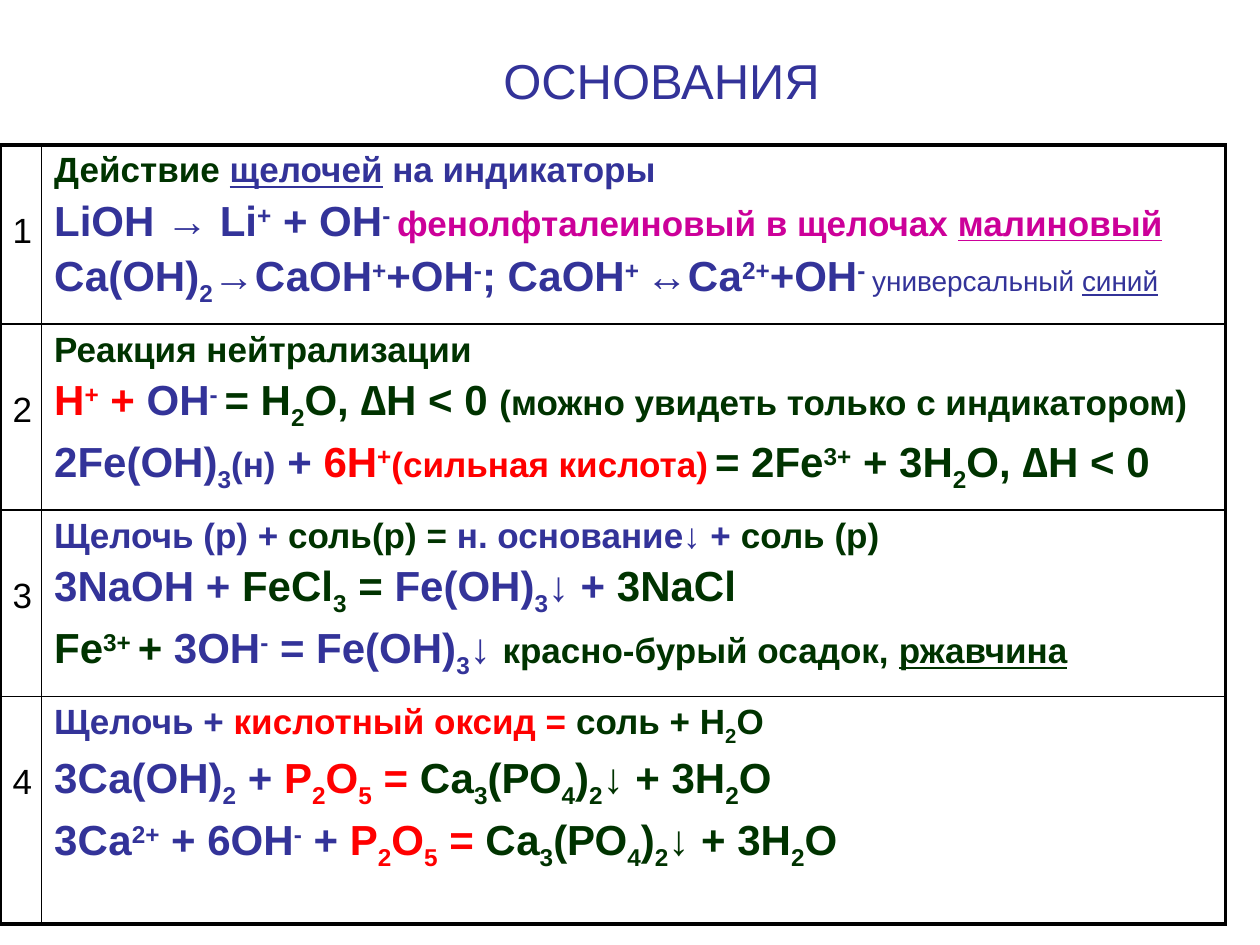
from lxml import etree
from pptx import Presentation
from pptx.dml.color import RGBColor
from pptx.enum.text import MSO_ANCHOR, PP_ALIGN
from pptx.oxml.ns import qn
from pptx.util import Pt

MIDDLE, CENTER = MSO_ANCHOR.MIDDLE, PP_ALIGN.CENTER
FONT = "Arial"
COLORS = {
    "base": "333399", "salt": "003300", "acid": "FF0000",
    "crimson": "CC0099", "black": "000000",
}
HEADING, FORMULA, REMARK = 20, 24, 16
BASELINES = {"^": "30000", "_": "-25000"}
THIN, THICK = 1, 2.25

COLUMN_WIDTHS = (23.8, 676.6)
ROW_HEIGHTS = (101.5, 101.5, 101, 130)

# Each piece is (text, color, format); "|" parts a text, and a part that
# begins with ^ or _ is a superscript or a subscript.
BIG = {"size": FORMULA}
UNDERLINED = {"underline": True}
PHOSPHATE = ("Са|_3|(РО|_4|)|_2|↓ + 3Н|_2|О", "salt", BIG)
OXIDE = ("Р|_2|О|_5| = ", "acid", BIG)
REACTIONS = [
    [
        [("Действие ", "salt", {}), ("щелочей", "base", UNDERLINED),
         (" на индикаторы", "base", {})],
        [("LiOH → Li|^+| + OH|^- ", "base", BIG),
         ("фенолфталеиновый в щелочах ", "crimson", {}),
         ("малиновый", "crimson", UNDERLINED)],
        [("Са(ОН)|_2|→СаОН|^+|+ОН|^-|; СаОН|^+ |↔Са|^2+|+ОН|^- ", "base", BIG),
         ("универсальный ", "base", {"size": REMARK, "bold": False}),
         ("синий", "base", {"size": REMARK, "bold": False, "underline": True})],
    ],
    [
        [("Реакция нейтрализации", "salt", {})],
        [("Н|^+| + ", "acid", BIG), ("ОН|^- ", "base", BIG),
         ("= Н|_2|О, ∆Н < 0 ", "salt", BIG),
         ("(можно увидеть только с индикатором)", "salt", {})],
        [("2Fe(OH)|_3", "base", BIG), ("(н)", "base", {}),
         (" + ", "base", BIG), ("6H|^+", "acid", BIG),
         ("(сильная кислота)", "acid", {}),
         ("^ |= 2Fe|^3+| + 3H|_2|O, ∆Н < 0", "salt", BIG)],
    ],
    [
        [("Щелочь (р) + ", "base", {}), ("соль(р) = ", "salt", {}),
         ("н. основание↓ + ", "base", {}), ("соль (р)", "salt", {})],
        [("3NaOH +", "base", BIG), (" FeCl|_3| = ", "salt", BIG),
         ("Fe(OH)|_3|↓ + ", "base", BIG), ("3NaCl", "salt", BIG)],
        [("Fe|^3+ |+ ", "salt", BIG), ("3OH|^-| = Fe(OH)|_3|↓ ", "base", BIG),
         ("красно-бурый осадок, ", "salt", {}),
         ("ржавчина", "salt", UNDERLINED)],
    ],
    [
        [("Щелочь + ", "base", {}), ("кислотный оксид = ", "acid", {}),
         ("соль + Н|_2|О", "salt", {})],
        [("3Са(ОН)|_2| + ", "base", BIG), OXIDE, PHOSPHATE],
        [("3Са|^2+| + 6ОН|^-| + ", "base", BIG), OXIDE, PHOSPHATE],
    ],
]


def add_text(paragraph, text, color, size=HEADING, bold=True, underline=False):
    """Append a text, raising or lowering its marked parts."""
    for part in text.split("|"):
        baseline = BASELINES.get(part[0])
        run = paragraph.add_run()
        run.text = part[1:] if baseline else part
        font = run.font
        font.name, font.size, font.bold = FONT, Pt(size), bold
        font.underline = underline
        font.color.rgb = RGBColor.from_string(COLORS[color])
        if baseline:
            run._r.get_or_add_rPr().set("baseline", baseline)


def set_borders(cell, **widths):
    """Draw the cell sides L, R, T, B, which the schema wants in that order."""
    properties = cell._tc.get_or_add_tcPr()
    for index, (side, width) in enumerate(widths.items()):
        line = etree.Element(qn(f"a:ln{side}"), w=str(Pt(width)))
        fill = etree.SubElement(line, qn("a:solidFill"))
        etree.SubElement(fill, qn("a:srgbClr"), val=COLORS["black"])
        properties.insert(index, line)


def add_title(slide, text):
    frame = slide.shapes.add_textbox(Pt(54), Pt(20), Pt(648), Pt(51)).text_frame
    frame.word_wrap = True
    frame.vertical_anchor = MIDDLE
    frame.paragraphs[0].alignment = CENTER
    add_text(frame.paragraphs[0], text, "base", size=28, bold=False)


def fill_reaction(cell, lines):
    frame = cell.text_frame
    for index, pieces in enumerate(lines):
        paragraph = frame.add_paragraph() if index else frame.paragraphs[0]
        if index:
            paragraph.space_before = Pt(4.8)
        for text, color, style in pieces:
            add_text(paragraph, text, color, **style)


def add_reaction_table(slide):
    table = slide.shapes.add_table(
        len(REACTIONS), len(COLUMN_WIDTHS), Pt(0), Pt(82.8),
        Pt(sum(COLUMN_WIDTHS)), Pt(sum(ROW_HEIGHTS))).table
    table.first_row = table.horz_banding = False
    for column, width in zip(table.columns, COLUMN_WIDTHS):
        column.width = Pt(width)

    last = len(REACTIONS) - 1
    for index, lines in enumerate(REACTIONS):
        table.rows[index].height = Pt(ROW_HEIGHTS[index])
        number, reaction = table.cell(index, 0), table.cell(index, 1)
        number.margin_top = Pt(38)
        add_text(number.text_frame.paragraphs[0], str(index + 1), "black", bold=False)
        fill_reaction(reaction, lines)
        top = THICK if index == 0 else THIN
        bottom = THICK if index == last else THIN
        for cell, left, right in ((number, THICK, THIN), (reaction, THIN, THICK)):
            cell.fill.background()
            set_borders(cell, L=left, R=right, T=top, B=bottom)


def main():
    presentation = Presentation()
    presentation.slide_width, presentation.slide_height = Pt(720), Pt(540)
    slide = presentation.slides.add_slide(presentation.slide_layouts[6])
    add_title(slide, "ОСНОВАНИЯ")
    add_reaction_table(slide)
    presentation.save("out.pptx")


if __name__ == "__main__":
    main()
